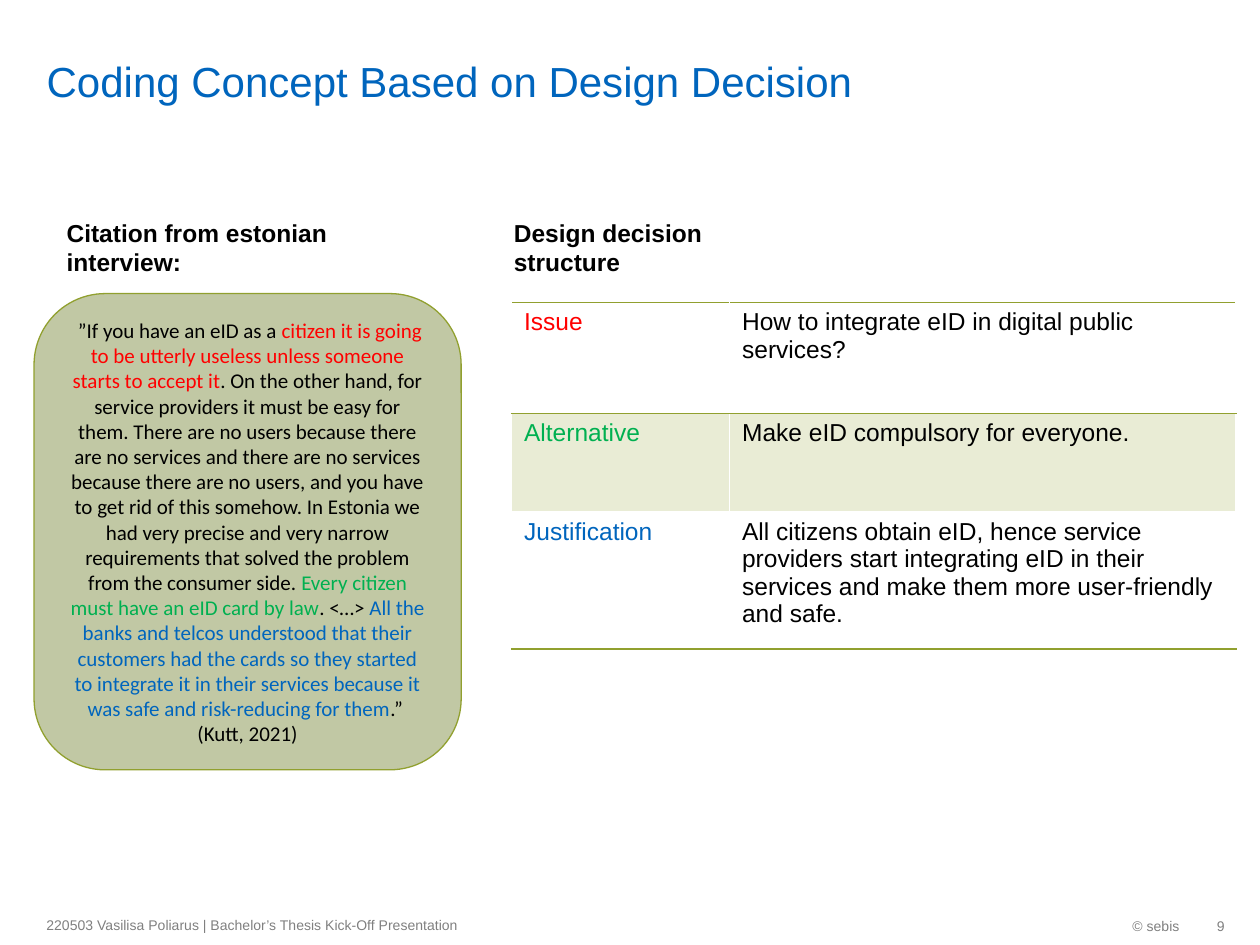
from lxml import etree
from pptx import Presentation
from pptx.dml.color import RGBColor
from pptx.enum.shapes import MSO_SHAPE
from pptx.enum.text import MSO_ANCHOR, PP_ALIGN
from pptx.oxml import parse_xml
from pptx.util import Inches, Pt

ROUND = MSO_SHAPE.ROUNDED_RECTANGLE
MIDDLE, BOTTOM = MSO_ANCHOR.MIDDLE, MSO_ANCHOR.BOTTOM
LEFT, CENTER, RIGHT = PP_ALIGN.LEFT, PP_ALIGN.CENTER, PP_ALIGN.RIGHT

BLACK = RGBColor(0x00, 0x00, 0x00)
GRAY = RGBColor(0x80, 0x80, 0x80)
RED = RGBColor(0xFF, 0x00, 0x00)
GREEN = RGBColor(0x00, 0xB0, 0x50)
BLUE = RGBColor(0x00, 0x65, 0xBD)
OLIVE = RGBColor(0x91, 0xA0, 0x2F)
SAGE = RGBColor(0xC1, 0xC8, 0xA4)
PALE = RGBColor(0xE9, 0xEC, 0xD5)
NS = "http://schemas.openxmlformats.org/drawingml/2006/main"


def style(run, size, color, face="Arial", bold=False):
    font = run.font
    font.size, font.name, font.bold = Pt(size), face, bold
    font.color.rgb = color


def rule(cell, side, width):
    line = etree.fromstring(
        f'<a:{side} xmlns:a="{NS}" w="{Pt(width)}"><a:solidFill>'
        f'<a:srgbClr val="{OLIVE}"/></a:solidFill></a:{side}>')
    cell._tc.get_or_add_tcPr().append(parse_xml(etree.tostring(line)))


prs = Presentation()
prs.slide_width, prs.slide_height = Inches(10), Inches(7.5)
slide = prs.slides.add_slide(prs.slide_layouts[5])
shapes = slide.shapes

title = shapes.title
title.left, title.top = Inches(0.27), Inches(0.05)
title.width, title.height = Inches(8.24), Inches(0.79)
frame = title.text_frame
frame.text = "Coding Concept Based on Design Decision"
frame.vertical_anchor = BOTTOM
frame.margin_top = frame.margin_bottom = 0
para = frame.paragraphs[0]
para.alignment = LEFT
style(para.runs[0], 24, BLUE)

foot = "220503 Vasilisa Poliarus | Bachelor’s Thesis Kick-Off Presentation"
labels = [
    (foot, 0.27, 7.18, 4.73, 0.32, LEFT, 0.1),
    ("© sebis", 7.7, 7.19, 1.76, 0.32, RIGHT, 0.1),
    ("9", 9.45, 7.19, 0.27, 0.32, RIGHT, 0),
]
for text, x, y, w, h, align, inset in labels:
    box = shapes.add_textbox(Inches(x), Inches(y), Inches(w), Inches(h))
    frame = box.text_frame
    frame.text = text
    frame.word_wrap = True
    frame.vertical_anchor = MIDDLE
    frame.margin_right = Inches(inset)
    para = frame.paragraphs[0]
    para.alignment = align
    style(para.runs[0], 8, GRAY)

heads = [
    ("Citation from estonian interview:", 0.43, 2.28),
    ("Design decision structure", 3.98, 1.97),
]
for text, x, w in heads:
    box = shapes.add_textbox(Inches(x), Inches(1.68), Inches(w), Inches(0.57))
    frame = box.text_frame
    frame.text = text
    frame.word_wrap = True
    style(frame.paragraphs[0].runs[0], 14, BLACK, bold=True)

quote = shapes.add_shape(ROUND, Inches(0.27), Inches(2.33), Inches(3.39), Inches(3.78))
quote.shadow.inherit = False
quote.fill.solid()
quote.fill.fore_color.rgb = SAGE
quote.line.color.rgb = OLIVE
quote.line.width = Pt(0.75)
parts = [
    [
        (" ”If you have an eID as a ", BLACK),
        ("citizen it is going to be utterly useless unless someone starts to accept it", RED),
        (". On the other hand, for service providers it must be easy for them. "
         "There are no users because there are no services and there are no services "
         "because there are no users, and you have to get rid of this somehow. "
         "In Estonia we had very precise and very narrow requirements that solved "
         "the problem from the consumer side. ", BLACK),
        ("Every citizen must have an eID card by law", GREEN),
        (". <…> ", BLACK),
        ("All the banks and telcos understood that their customers had the cards so "
         "they started to integrate it in their services because it was safe and "
         "risk-reducing for them", BLUE),
        (".” ", BLACK),
    ],
    [("(Kutt, 2021)", BLACK)],
]
frame = quote.text_frame
frame.word_wrap = True
frame.vertical_anchor = MIDDLE
frame.add_paragraph()
for para, runs in zip(frame.paragraphs, parts):
    para.alignment = CENTER
    for text, color in runs:
        run = para.add_run()
        run.text = text
        style(run, 12, color, "Calibri")

rows = [
    ("Issue", RED, "How to integrate eID in digital public services?", 0.88),
    ("Alternative", GREEN, "Make eID compulsory for everyone.", 0.78),
    ("Justification", BLUE, "All citizens obtain eID, hence service providers start "
     "integrating eID in their services and make them more user-friendly and safe.", 1.09),
]
edges = [[("lnT", 1), ("lnB", 1)], [("lnT", 1)], [("lnB", 1)]]
table = shapes.add_table(3, 2, Inches(4.06), Inches(2.4), Inches(5.75), Inches(2.75)).table
table.first_row = table.horz_banding = False
table.columns[0].width, table.columns[1].width = Inches(1.73), Inches(4.02)
for i, (name, color, text, high) in enumerate(rows):
    table.rows[i].height = Inches(high)
    for j, (word, tint) in enumerate([(name, color), (text, BLACK)]):
        cell = table.cell(i, j)
        cell.text_frame.text = word
        style(cell.text_frame.paragraphs[0].runs[0], 14, tint)
        for side, width in edges[i]:
            rule(cell, side, width)
        if i == 1:
            cell.fill.solid()
            cell.fill.fore_color.rgb = PALE
        else:
            cell.fill.background()

prs.save("out.pptx")
